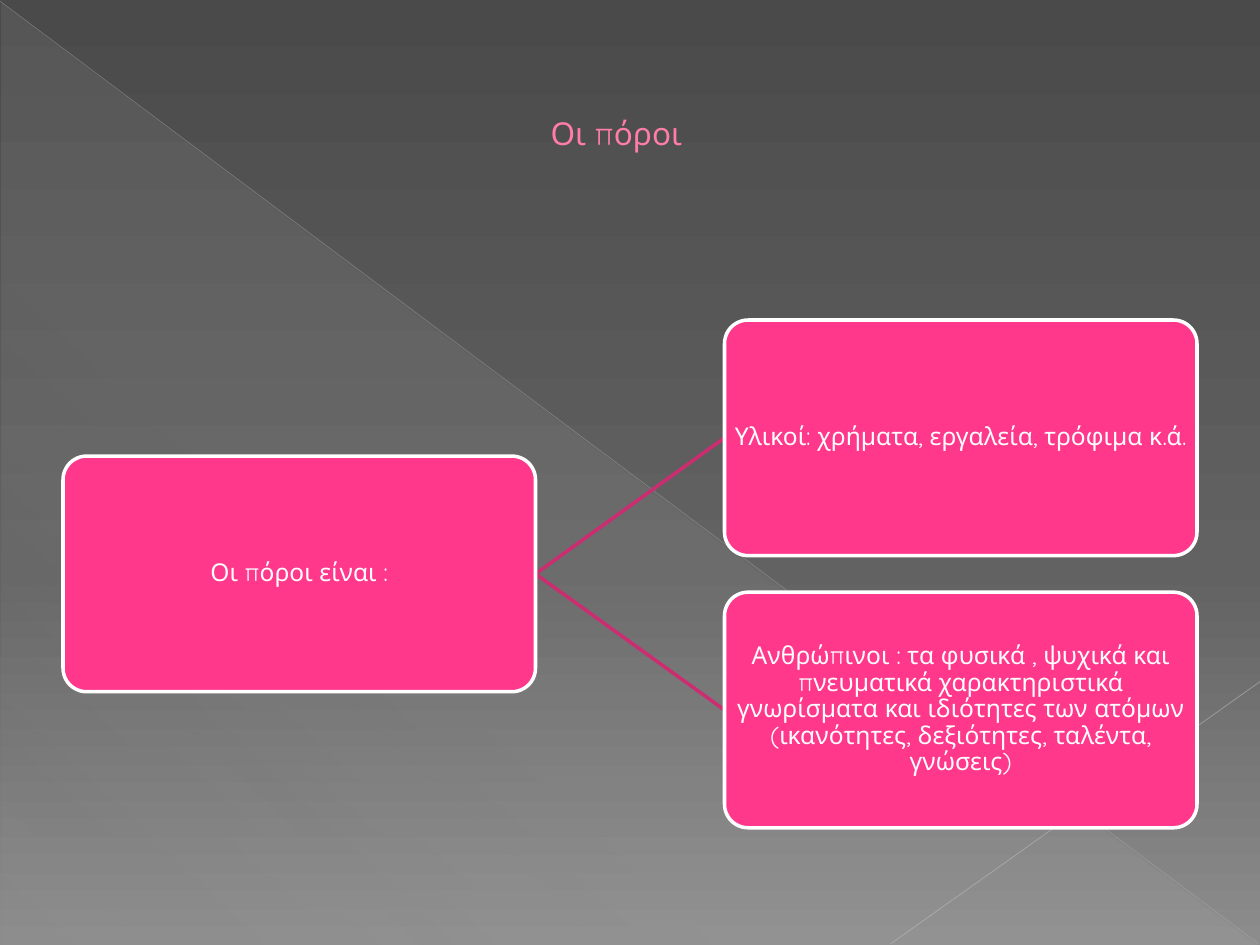
"""Build a slide that splits resources into material and human ones."""
import lxml.etree
import pptx
import pptx.dml.color
import pptx.enum.shapes
import pptx.enum.text
import pptx.oxml
import pptx.oxml.ns
import pptx.util

Inches = pptx.util.Inches
Pt = pptx.util.Pt
qn = pptx.oxml.ns.qn
sub = lxml.etree.SubElement


def shade(fill, stops, angle):
    fill.gradient()
    grad = fill._fill._gradFill
    for child in list(grad):
        grad.remove(child)
    group = sub(grad, qn("a:gsLst"))
    for place, color, alpha in stops:
        stop = sub(group, qn("a:gs"), pos=str(place * 1000))
        tint = sub(stop, qn("a:srgbClr"), val=color)
        sub(tint, qn("a:alpha"), val=str(alpha * 1000))
    sub(grad, qn("a:lin"), ang=str(angle * 60000), scaled="0")


def rgb(color):
    return pptx.dml.color.RGBColor.from_string(color)


deck = pptx.Presentation()
deck.slide_width, deck.slide_height = Inches(10), Inches(7.5)
slide = deck.slides.add_slide(deck.slide_layouts[6])
shapes = slide.shapes
kinds = pptx.enum.shapes.MSO_SHAPE
middle = pptx.enum.text.MSO_ANCHOR.MIDDLE

shade(slide.background.fill,
      [(0, "4A4A4A", 100), (60, "626262", 100), (100, "8C8C8C", 100)], 90)
wedge = shapes.add_shape(kinds.RIGHT_TRIANGLE, Inches(0.01), Inches(0.02),
                         Inches(9.98), Inches(7.48))
wedge.shadow.inherit = False
wedge.line.fill.background()
shade(wedge.fill,
      [(0, "D2D2D2", 10), (70, "D2D2D2", 8), (100, "D2D2D2", 1)], 133)

wide, high = 3.75, 1.87
left, right = 0.5, 5.75
root, top, low = 3.62, 2.54, 4.7
start, mid = left + wide, root + high / 2
lines = [
    (0, 0.01, 9.99, 7.49, "BFBFBF", 0.39, 35),
    (10, 5.41, 7.07, 7.49, "C6C6C6", 0.47, 45),
    (start, mid, right, top + high / 2, "CC2D70", 2, 100),
    (start, mid, right, low + high / 2, "CC2D70", 2, 100),
]
for x1, y1, x2, y2, color, width, alpha in lines:
    line = shapes.add_connector(
        pptx.enum.shapes.MSO_CONNECTOR.STRAIGHT,
        Inches(x1), Inches(y1), Inches(x2), Inches(y2))
    line.line.color.rgb = rgb(color)
    line.line.width = Pt(width)
    tint = next(line._element.spPr.iter(qn("a:srgbClr")))
    sub(tint, qn("a:alpha"), val=str(alpha * 1000))
    sub(line._element.spPr, qn("a:effectLst"))

title = shapes.add_textbox(Inches(0.5), Inches(0.29), Inches(9), Inches(1.53))
frame = title.text_frame
frame.word_wrap = True
frame.vertical_anchor = middle
frame.margin_left = Inches(3.87)
frame.text = "Οι πόροι"
font = frame.paragraphs[0].runs[0].font
font.name, font.size = "Quicksand", Pt(18)
font.color.rgb = rgb("FF7DA7")

boxes = [
    (left, root, "Οι πόροι είναι :"),
    (right, top, "Υλικοί: χρήματα, εργαλεία, τρόφιμα κ.ά."),
    (right, low, "Ανθρώπινοι : τα φυσικά , ψυχικά και πνευματικά "
     "χαρακτηριστικά γνωρίσματα και ιδιότητες των ατόμων "
     "(ικανότητες, δεξιότητες, ταλέντα, γνώσεις)"),
]
for x, y, text in boxes:
    box = shapes.add_shape(kinds.ROUNDED_RECTANGLE, Inches(x), Inches(y),
                           Inches(wide), Inches(high))
    box.adjustments[0] = 0.1
    box.shadow.inherit = False
    box.fill.solid()
    box.fill.fore_color.rgb = rgb("FF388C")
    box.line.color.rgb = rgb("FFFFFF")
    box.line.width = Pt(2)
    frame = box.text_frame
    frame.word_wrap = True
    frame.vertical_anchor = middle
    frame.margin_left = frame.margin_right = Inches(0.01)
    frame.margin_top = frame.margin_bottom = Inches(0.01)
    frame.text = text
    para = frame.paragraphs[0]
    para.alignment = pptx.enum.text.PP_ALIGN.CENTER
    para.line_spacing = 0.9
    font = para.runs[0].font
    font.name, font.size = "Quicksand", Pt(14)
    font.color.rgb = rgb("FFFFFF")

deck.save("out.pptx")
